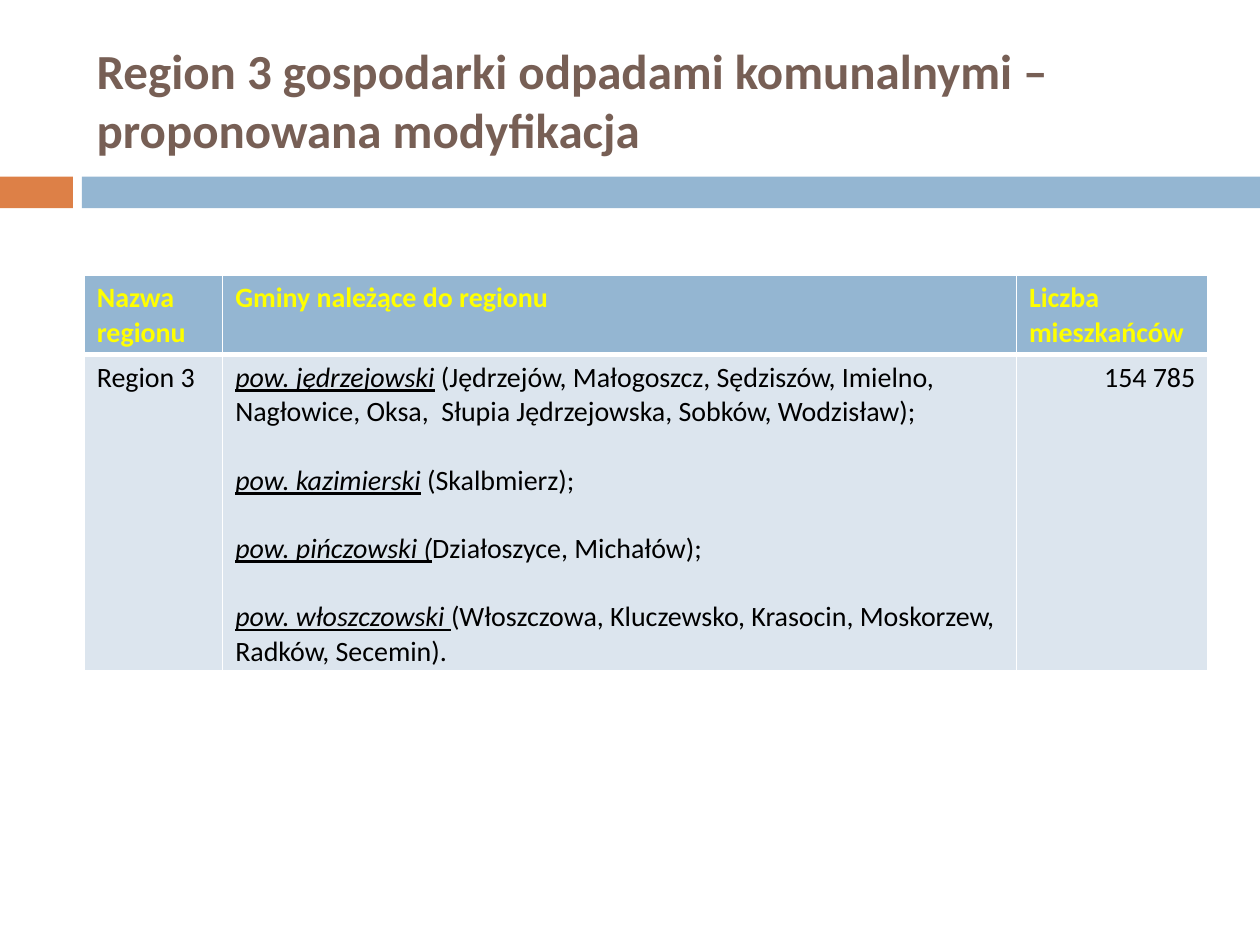
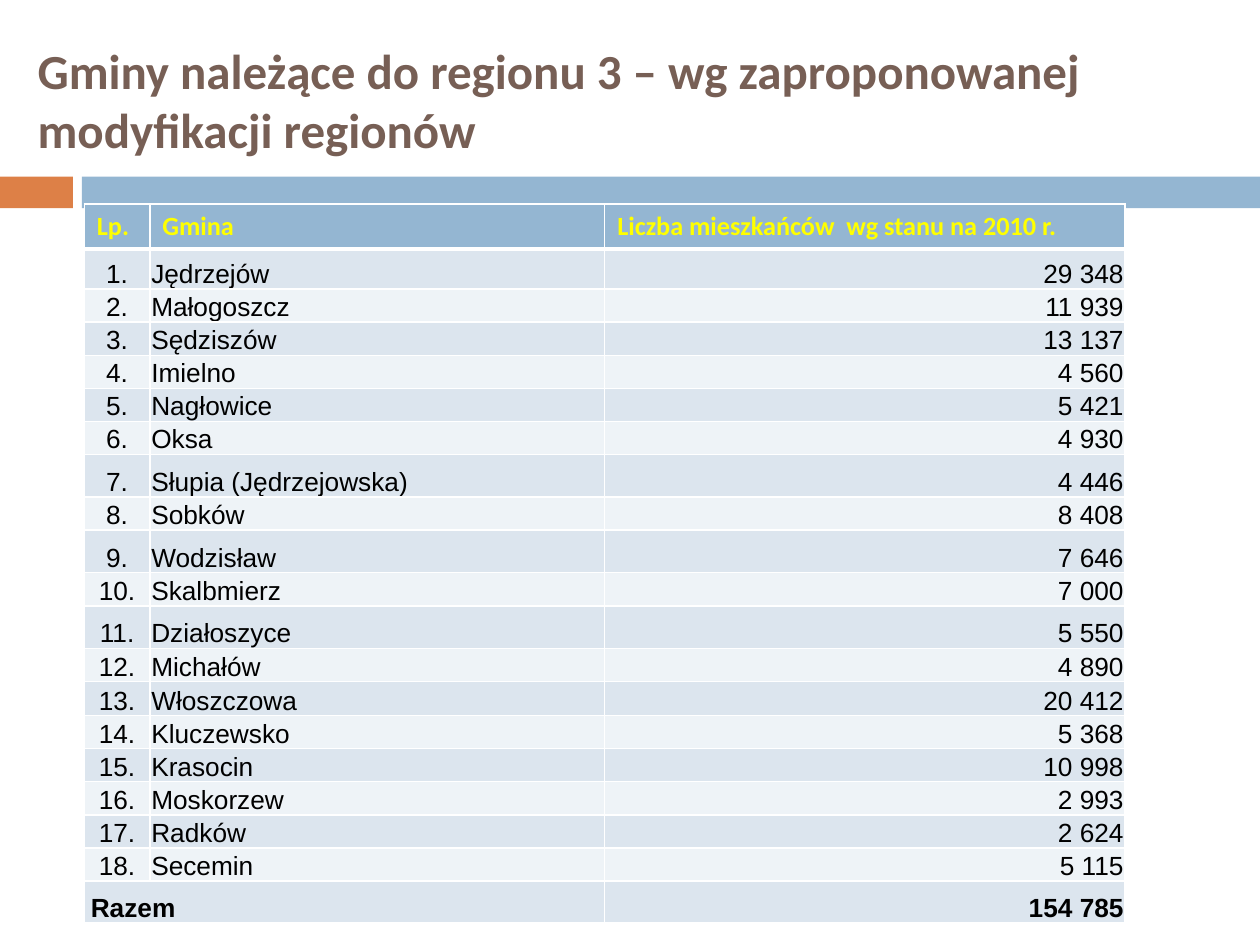
from lxml.etree import SubElement
from pptx import Presentation
from pptx.dml.color import RGBColor
from pptx.enum.shapes import MSO_SHAPE as Shape
from pptx.enum.text import MSO_ANCHOR as Anchor, PP_ALIGN as Align
from pptx.oxml.ns import qn
from pptx.util import Cm, Pt

COLOURS = {
    "title": "775F55", "accent": "DD8047", "band": "94B6D2",
    "header_text": "FFFF00", "text": "000000", "line": "FFFFFF",
    "row_dark": "DCE5EE", "row_light": "EEF3F7",
}
TITLE_FONT = "Calibri"
LIST_FONT = "Arial"
TABLE_LEFT = 1.7
TIGHT = (0.03, 0.03, 0.03, 0)

COUNTIES = [
    ("pow. jędrzejowski", " (Jędrzejów, Małogoszcz, Sędziszów, Imielno, Nagłowice, "
     "Oksa,  Słupia Jędrzejowska, Sobków, Wodzisław);"),
    ("pow. kazimierski", " (Skalbmierz);"),
    ("pow. pińczowski (", "Działoszyce, Michałów);"),
    ("pow. włoszczowski ", "(Włoszczowa, Kluczewsko, Krasocin, Moskorzew, Radków, Secemin)."),
]
COMMUNES = [
    ("Jędrzejów", "29 348"), ("Małogoszcz", "11 939"), ("Sędziszów", "13 137"),
    ("Imielno", "4 560"), ("Nagłowice", "5 421"), ("Oksa", "4 930"),
    ("Słupia (Jędrzejowska)", "4 446"), ("Sobków", "8 408"), ("Wodzisław", "7 646"),
    ("Skalbmierz", "7 000"), ("Działoszyce", "5 550"), ("Michałów", "4 890"),
    ("Włoszczowa", "20 412"), ("Kluczewsko", "5 368"), ("Krasocin", "10 998"),
    ("Moskorzew", "2 993"), ("Radków", "2 624"), ("Secemin", "5 115"),
]
TOTAL = "154 785"


def colour(name):
    """Return the named palette colour."""
    return RGBColor.from_string(COLOURS[name])


def style_font(font, face, size, colour_name, bold=False):
    """Set face, size, colour and weight of a font."""
    font.name, font.size, font.bold = face, Pt(size), bold
    font.color.rgb = colour(colour_name)


def add_bar(page, left, width, colour_name):
    """Draw one part of the strip below the title."""
    bar = page.shapes.add_shape(Shape.RECTANGLE, Cm(left), Cm(3.56), Cm(width), Cm(0.64))
    bar.shadow.inherit = False
    bar.fill.solid()
    bar.fill.fore_color.rgb = colour(colour_name)
    bar.line.fill.background()


def add_page(deck, title, left, width):
    """Add a page with the shared strip and a title."""
    page = deck.slides.add_slide(deck.slide_layouts[6])
    add_bar(page, 0, 1.47, "accent")
    add_bar(page, 1.65, 23.75, "band")
    frame = page.shapes.add_textbox(Cm(left), Cm(0.64), Cm(width), Cm(2.74)).text_frame
    frame.word_wrap = True
    frame.vertical_anchor = Anchor.MIDDLE
    para = frame.paragraphs[0]
    para.text = title
    style_font(para.font, TITLE_FONT, 28, "title", True)
    return page


def set_borders(cell, top, bottom):
    """Give a cell white borders, with top and bottom widths in points."""
    properties = cell._tc.get_or_add_tcPr()
    for side, width in (("L", 1), ("R", 1), ("T", top), ("B", bottom)):
        line = SubElement(properties, qn(f"a:ln{side}"), w=str(Pt(width)))
        fill = SubElement(line, qn("a:solidFill"))
        SubElement(fill, qn("a:srgbClr"), val=COLOURS["line"])


def add_table(page, top, widths, heights):
    """Add a table with white borders, a coloured header and banded rows."""
    table = page.shapes.add_table(
        len(heights), len(widths), Cm(TABLE_LEFT), Cm(top),
        Cm(sum(widths)), Cm(sum(heights))).table
    table.horz_banding = False
    for column, width in zip(table.columns, widths):
        column.width = Cm(width)
    for index, (row, height) in enumerate(zip(table.rows, heights)):
        row.height = Cm(height)
        fill = "band" if index == 0 else "row_dark" if index % 2 else "row_light"
        for cell in row.cells:
            set_borders(cell, 3 if index == 1 else 1, 3 if index == 0 else 1)
            cell.fill.solid()
            cell.fill.fore_color.rgb = colour(fill)
    return table


def write_cell(cell, text, face, size, align=Align.LEFT, bold=False, colour_name="text"):
    """Write one paragraph into a cell and return it."""
    para = cell.text_frame.paragraphs[0]
    para.text = text
    para.alignment = align
    style_font(para.font, face, size, colour_name, bold)
    return para


def write_header(table, labels, size):
    """Fill the header row."""
    for cell, label in zip(table.rows[0].cells, labels):
        write_cell(cell, label, TITLE_FONT, size, bold=True, colour_name="header_text")


def write_counties(cell):
    """List the counties, each name underlined and in italics."""
    frame = cell.text_frame
    for index, (county, members) in enumerate(COUNTIES):
        para = frame.add_paragraph() if index else frame.paragraphs[0]
        para.space_before = Pt(19.5 if index else 0)
        style_font(para.font, TITLE_FONT, 16, "text")
        name = para.add_run()
        name.text = county
        name.font.italic = name.font.underline = True
        para.add_run().text = members


def set_inset(cell, left, top, right, bottom):
    """Set cell margins and align the text to the bottom."""
    cell.margin_left, cell.margin_top = Cm(left), Cm(top)
    cell.margin_right, cell.margin_bottom = Cm(right), Cm(bottom)
    cell.vertical_anchor = Anchor.BOTTOM


def build_region_page(deck):
    """Build the page with the region summary."""
    page = add_page(
        deck, "Region 3 gospodarki odpadami komunalnymi – proponowana modyfikacja", 1.7, 22.66)
    table = add_table(page, 5.54, [2.79, 16, 3.86], [1.57, 6.38])
    write_header(table, ["Nazwa regionu", "Gminy należące do regionu", "Liczba mieszkańców"], 16)
    write_cell(table.cell(1, 0), "Region 3", TITLE_FONT, 16)
    write_counties(table.cell(1, 1))
    write_cell(table.cell(1, 2), TOTAL, TITLE_FONT, 16, Align.RIGHT)


def build_communes_page(deck):
    """Build the page with the population of each commune."""
    page = add_page(
        deck, "Gminy należące do regionu 3 – wg zaproponowanej modyfikacji regionów", 0.51, 23.85)
    last = len(COMMUNES) + 1
    special = {0: 0.91, 1: 0.81, 7: 0.86, 9: 0.86, 11: 0.86, 13: 0.69, last: 0.84}
    heights = [special.get(index, 0.66) for index in range(last + 1)]
    table = add_table(page, 4.11, [1.32, 9.17, 10.49], heights)
    write_header(table, ["Lp.", "Gmina", "Liczba mieszkańców  wg stanu na 2010 r."], 15)
    aligns = (Align.CENTER, Align.LEFT, Align.RIGHT)
    for number, commune in enumerate(COMMUNES, 1):
        values = (f"{number}.", *commune)
        for cell, value, align in zip(table.rows[number].cells, values, aligns):
            set_inset(cell, *TIGHT)
            write_cell(cell, value, LIST_FONT, 15, align)
    label, total = table.cell(last, 0), table.cell(last, 2)
    label.merge(table.cell(last, 1))
    set_inset(label, 0.13, 0, 0.13, 0)
    write_cell(label, "Razem", LIST_FONT, 15, bold=True).line_spacing = 1.15
    set_inset(total, *TIGHT)
    write_cell(total, TOTAL, LIST_FONT, 15, Align.RIGHT, True)


def main():
    """Build and save the deck."""
    deck = Presentation()
    deck.slide_width, deck.slide_height = Cm(25.4), Cm(19.05)
    build_region_page(deck)
    build_communes_page(deck)
    deck.save("out.pptx")


if __name__ == "__main__":
    main()
